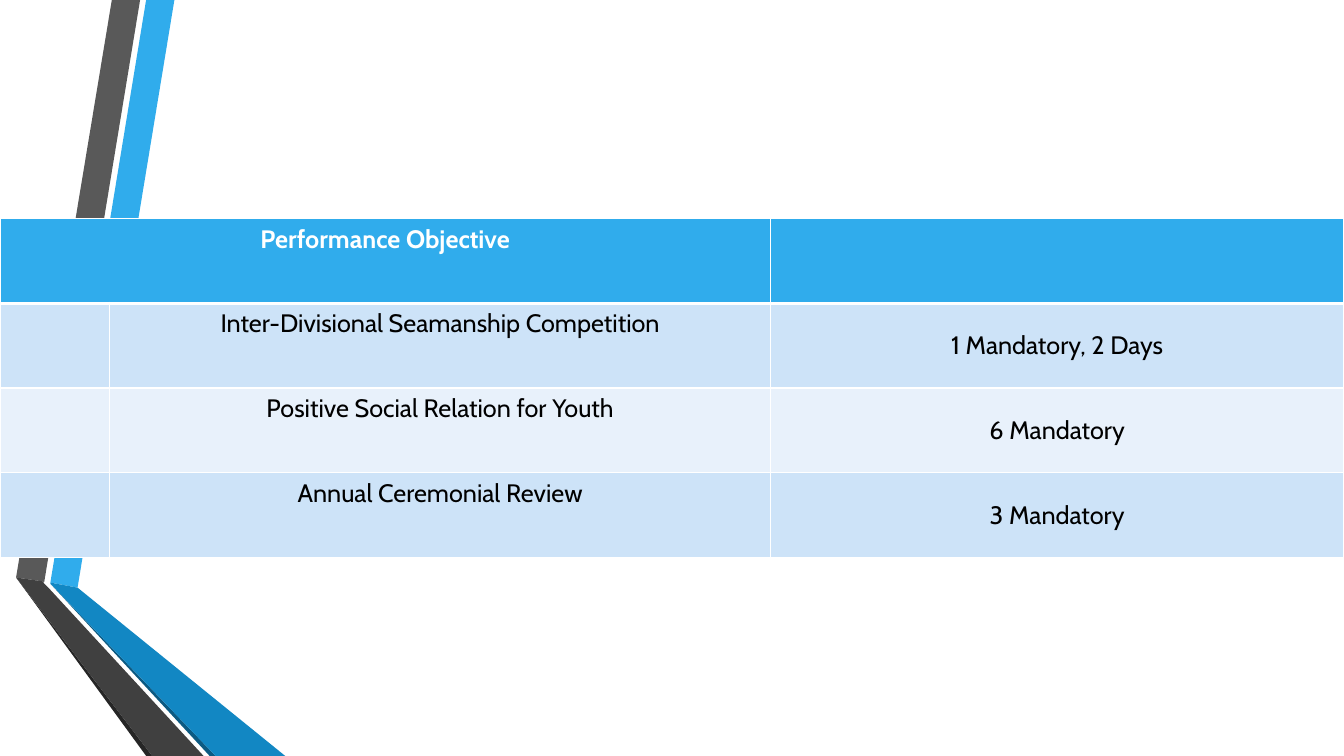
from lxml import etree
from pptx import Presentation
from pptx.dml.color import RGBColor
from pptx.enum import text
from pptx.oxml import ns
from pptx.util import Inches, Pt

WHITE, BLACK, BLUE = "FFFFFF", "000000", "30ACEC"
BANDS = ["CDE3F8", "E8F1FB"]
RIBBONS = [
    (BLUE, [(0.5, 5.78), (0.77, 5.83), (1.73, 0), (1.45, 0)]),
    ("595959", [(1.39, 0), (1.11, 0), (0.16, 5.73), (0.44, 5.77)]),
    ("262626", [(0.16, 5.73), (1.45, 7.5), (1.51, 7.5)]),
    ("0C5A82", [(0.5, 5.79), (2.08, 7.5), (2.14, 7.5)]),
    ("1287C3", [(0.5, 5.79), (2.14, 7.5), (2.83, 7.5), (0.77, 5.83), (0.5, 5.78)]),
    ("404040", [(2.02, 7.5), (0.48, 5.83), (0.43, 5.78), (0.44, 5.77),
                (0.16, 5.73), (1.51, 7.5)]),
]
COLUMNS = [1.09, 6.55, 5.69]
OBJECTIVES = [
    ("Performance Objective", "", ""),
    ("", "Inter-Divisional Seamanship Competition", "1 Mandatory, 2 Days"),
    ("", "Positive Social Relation for Youth", "6 Mandatory"),
    ("", "Annual Ceremonial Review", "3 Mandatory"),
]


def paint(fill, color):
    fill.solid()
    fill.fore_color.rgb = RGBColor.from_string(color)


def add_ribbons(slide, left, top):
    for color, points in RIBBONS:
        corners = [(Inches(left + x), Inches(top + y)) for x, y in points]
        builder = slide.shapes.build_freeform(*corners[0])
        builder.add_line_segments(corners[1:], close=True)
        ribbon = builder.convert_to_shape()
        paint(ribbon.fill, color)
        ribbon.line.fill.background()
        ribbon.shadow.inherit = False


def add_borders(cell, widths):
    """Draw white cell borders; widths maps L, R, T, B to points."""
    properties = cell._tc.get_or_add_tcPr()
    for position, side in enumerate("LRTB"):
        border = etree.Element(ns.qn(f"a:ln{side}"), w=str(Pt(widths[side])))
        fill = etree.SubElement(border, ns.qn("a:solidFill"))
        etree.SubElement(fill, ns.qn("a:srgbClr"), val=WHITE)
        properties.insert(position, border)


def add_objectives(slide, left, top, width, height):
    table = slide.shapes.add_table(
        len(OBJECTIVES), len(COLUMNS), Inches(left), Inches(top),
        Inches(width), Inches(height)).table
    table.first_row = table.horz_banding = False
    for column, column_width in zip(table.columns, COLUMNS):
        column.width = Inches(column_width)
    for r, objective in enumerate(OBJECTIVES):
        header = r == 0
        table.rows[r].height = Inches(height / len(OBJECTIVES))
        for c, wording in enumerate(objective):
            cell = table.cell(r, c)
            cell.text = wording
            paint(cell.fill, BLUE if header else BANDS[(r - 1) % 2])
            add_borders(cell, {"L": 1, "R": 1, "T": 3 if r == 1 else 1,
                               "B": 3 if header else 1})
            if c == 2:
                cell.vertical_anchor = text.MSO_ANCHOR.MIDDLE
            paragraph = cell.text_frame.paragraphs[0]
            paragraph.alignment = text.PP_ALIGN.CENTER
            font = paragraph.font
            font.name, font.size, font.bold = "Cabin", Pt(18), header
            font.color.rgb = RGBColor.from_string(WHITE if header else BLACK)
    table.cell(0, 0).merge(table.cell(0, 1))


def main():
    deck = Presentation()
    deck.slide_width, deck.slide_height = Inches(13.33), Inches(7.5)
    slide = deck.slides.add_slide(deck.slide_layouts[6])
    paint(slide.background.fill, WHITE)
    add_ribbons(slide, 0, 0)
    add_objectives(slide, 0, 2.17, 13.33, 3.36)
    deck.save("out.pptx")


if __name__ == "__main__":
    main()
